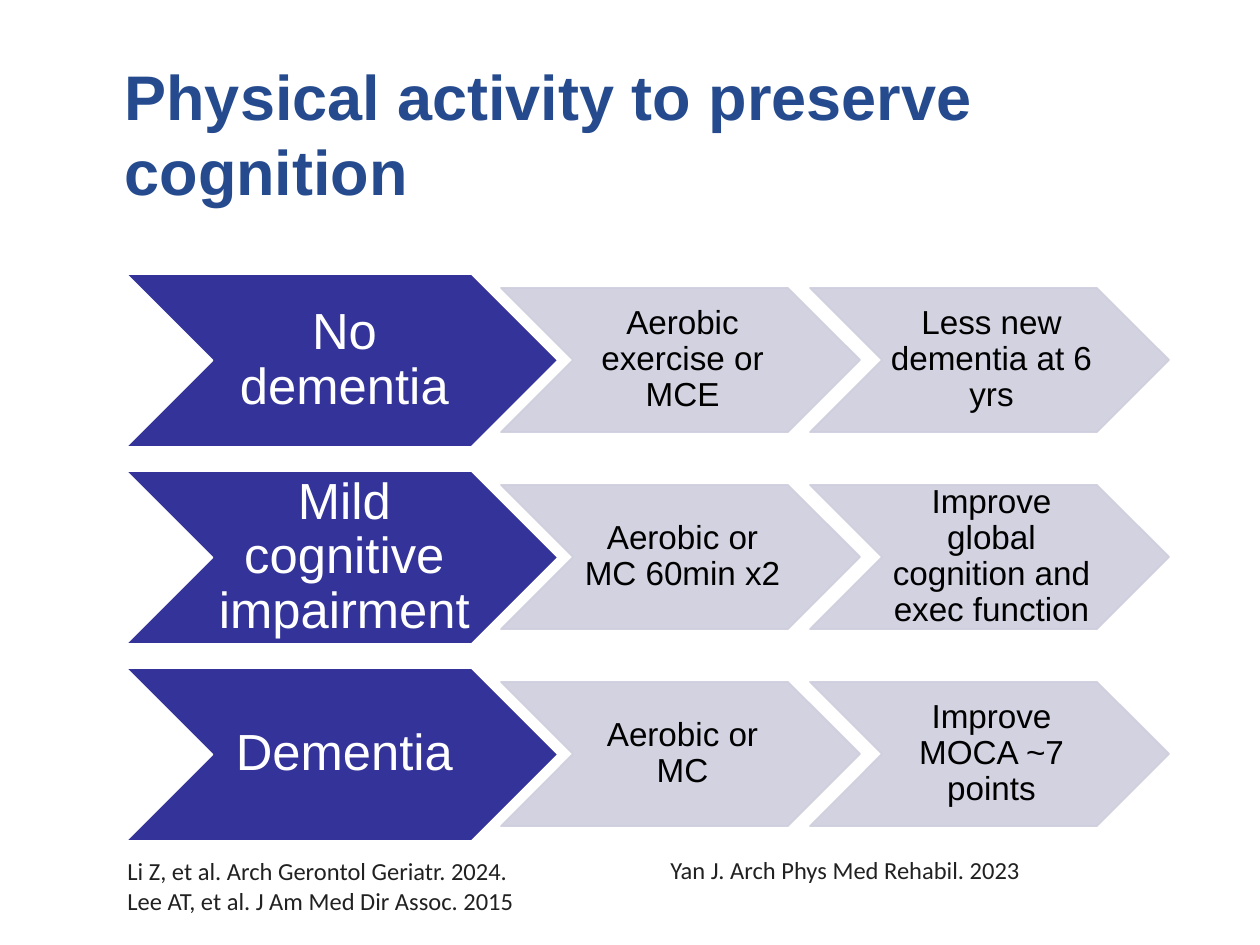
from dataclasses import dataclass

from lxml.etree import SubElement
from pptx import Presentation
from pptx.dml.color import RGBColor
from pptx.enum.shapes import MSO_SHAPE as Shape
from pptx.enum.text import MSO_ANCHOR as Anchor, PP_ALIGN as Align
from pptx.oxml.ns import qn
from pptx.util import Emu, Pt

TITLE = "Physical activity to preserve cognition"
ROWS = [
    ("No dementia", "Aerobic exercise or MCE", "Less new dementia at 6 yrs"),
    ("Mild cognitive impairment", "Aerobic or MC 60min x2",
     "Improve global cognition and exec function"),
    ("Dementia", "Aerobic or MC", "Improve MOCA ~7 points"),
]
# left, top, width, height in px, then the lines
CITATIONS = [
    ((115, 850, 415, 72), ["Li Z, et al. Arch Gerontol Geriatr. 2024.",
                           "Lee AT, et al. J Am Med Dir Assoc. 2015"]),
    ((658, 849, 378, 43), ["Yan J. Arch Phys Med Rehabil. 2023"]),
]
TITLE_BOX = (112, 54, 1071, 158)
FIRST_ROW_MIDDLE, ROW_STEP = 360, 197
STAGE_LEFT, STEP_LEFT, STEP_PITCH = 126, 501, 309
STAGE_SIZE, STEP_SIZE = (432, 173), (359, 144)


@dataclass(frozen=True)
class Style:
    fill: str
    line: str
    text: str
    size: int
    opacity: int
    insets: tuple


class Theme:
    heading_font, note_font = "Arial", "Calibri"
    title, title_size = "254B8E", 36
    note, note_size = "212121", 14
    stage = Style("333399", "FFFFFF", "FFFFFF", 29, 100, (5, 2, 0, 2))
    step = Style("CECEDE", "CECEDE", "000000", 19, 90, (4, 1, 0, 1))


def px(count):
    return Emu(count * 914400 // 126)


def place(box, frame):
    box.left, box.top, box.width, box.height = map(px, frame)


def format_text(frame, font, size, color, bold=False):
    for para in frame.paragraphs:
        for span in para.runs:
            span.font.name, span.font.size, span.font.bold = font, Pt(size), bold
            span.font.color.rgb = RGBColor.from_string(color)


def set_color(fill, color, opacity):
    """Fill with a solid colour, opacity in percent."""
    fill.solid()
    fill.fore_color.rgb = RGBColor.from_string(color)
    if opacity < 100:
        for node in fill._xPr.iter(qn("a:srgbClr")):
            SubElement(node, qn("a:alpha"), val=str(opacity * 1000))


def add_chevron(page, left, middle, size, text, style):
    width, height = size
    top = middle - height // 2
    chevron = page.shapes.add_shape(
        Shape.CHEVRON, *map(px, (left, top, width, height)))
    chevron.shadow.inherit = False
    # The line goes first, so that each colour is made transparent once
    set_color(chevron.line.fill, style.line, style.opacity)
    chevron.line.width = Pt(1)
    set_color(chevron.fill, style.fill, style.opacity) if style.opacity == 100 else \
        fill_after_line(chevron, style)
    frame = chevron.text_frame
    frame.text = text
    frame.word_wrap = True
    frame.vertical_anchor = Anchor.MIDDLE
    (frame.margin_left, frame.margin_top,
     frame.margin_right, frame.margin_bottom) = map(px, style.insets)
    frame.paragraphs[0].alignment = Align.CENTER
    frame.paragraphs[0].line_spacing = 0.9
    format_text(frame, Theme.heading_font, style.size, style.text)


def fill_after_line(chevron, style):
    """Fill a chevron whose line already carries its own transparency."""
    chevron.fill.solid()
    chevron.fill.fore_color.rgb = RGBColor.from_string(style.fill)
    color = chevron._element.spPr.find(qn("a:solidFill")).find(qn("a:srgbClr"))
    SubElement(color, qn("a:alpha"), val=str(style.opacity * 1000))


def add_citation(page, frame, lines):
    box = page.shapes.add_textbox(*map(px, frame))
    box.text_frame.text = "\n".join(lines)
    box.text_frame.word_wrap = False
    format_text(box.text_frame, Theme.note_font, Theme.note_size, Theme.note)


def main():
    deck = Presentation()
    deck.slide_width, deck.slide_height = px(1260), px(945)
    page = deck.slides.add_slide(deck.slide_layouts[5])

    title = page.shapes.title
    place(title, TITLE_BOX)
    title.text_frame.text = TITLE
    title.text_frame.vertical_anchor = Anchor.MIDDLE
    title.text_frame.paragraphs[0].alignment = Align.LEFT
    format_text(title.text_frame, Theme.heading_font, Theme.title_size,
                Theme.title, bold=True)

    for row, (stage, *steps) in enumerate(ROWS):
        middle = FIRST_ROW_MIDDLE + row * ROW_STEP
        add_chevron(page, STAGE_LEFT, middle, STAGE_SIZE, stage, Theme.stage)
        for column, step in enumerate(steps):
            add_chevron(page, STEP_LEFT + column * STEP_PITCH, middle,
                        STEP_SIZE, step, Theme.step)

    for frame, lines in CITATIONS:
        add_citation(page, frame, lines)
    deck.save("out.pptx")


if __name__ == "__main__":
    main()
